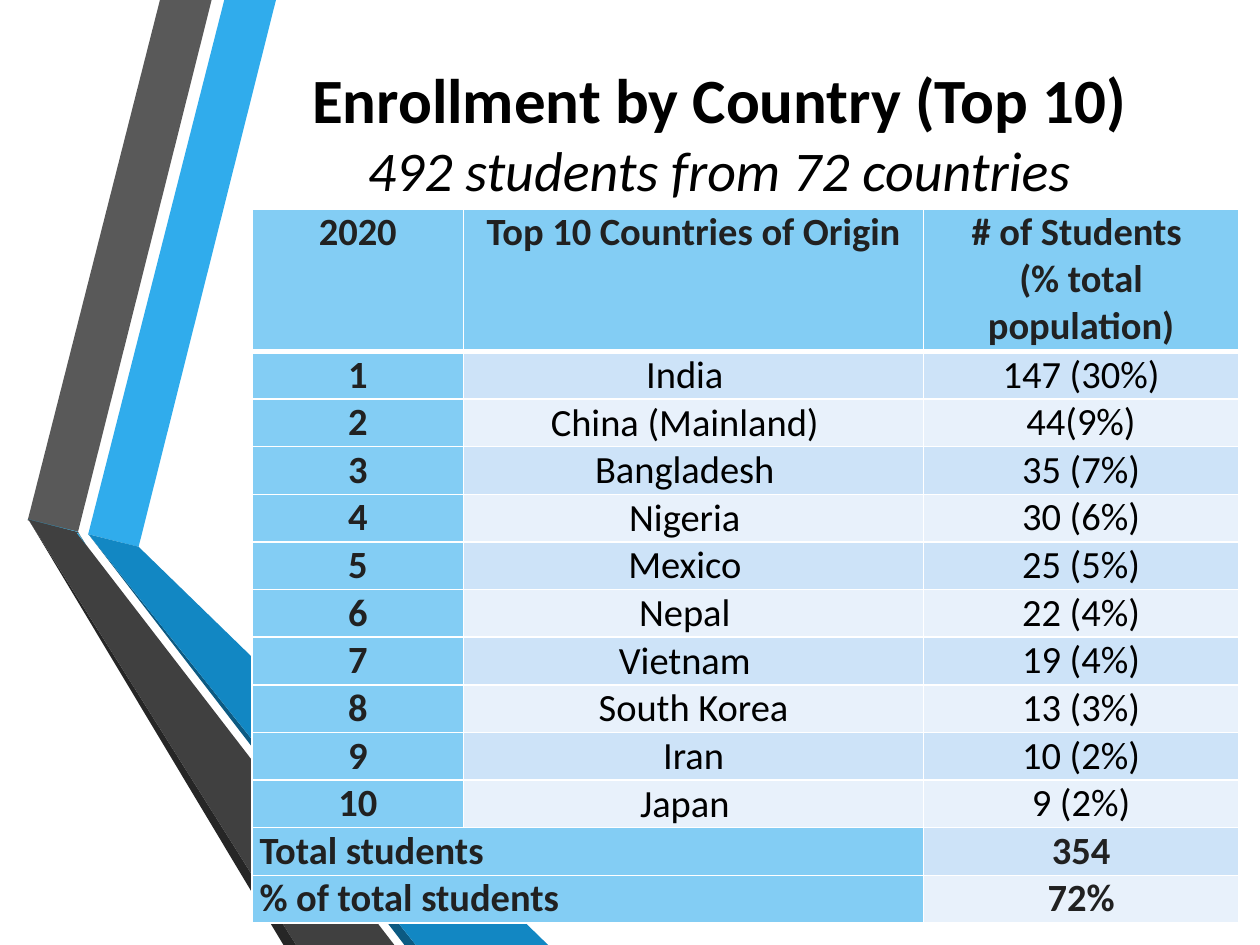
import pptx
import pptx.util
import pptx.dml.color
import pptx.enum.text
import pptx.oxml
import pptx.oxml.ns
from pptx.util import Inches

# Content
TITLE = [("Enrollment by Country (Top 10)", 36, True, False),
         ("492 students from 72 countries", 32, False, True)]
HEAD = [["2020"], ["Top 10 Countries of Origin"],
        ["# of Students ", "(% total population)"]]
ROWS = [("India", "147 (30%)"), ("China (Mainland)", "44(9%)"),
        ("Bangladesh", "35 (7%)"), ("Nigeria", "30 (6%)"),
        ("Mexico", "25 (5%)"), ("Nepal", "22 (4%)"),
        ("Vietnam", "19 (4%)"), ("South Korea", "13 (3%)"),
        ("Iran", "10 (2%)"), ("Japan", "9 (2%)")]
CENTERED = ("South Korea", "Iran")  # the other countries sit a little left
TOTALS = [("Total students", "354"), ("% of total students", "72%")]
COLS = [1.68, 3.65, 2.5]
HIGH, TALL = 5.67, 1.13
KEY, BANDS = "83CDF4", ["CDE3F8", "E8F1FB"]
DARK, BLACK, WHITE = "212121", "000000", "FFFFFF"

# Ribbon facets, back to front: colour and corners in hundredths of an inch
RIBBON = [
    ("30ACEC", [(70, 424), (110, 434), (219, 0), (178, 0)]),
    ("595959", [(168, 0), (127, 0), (22, 413), (62, 422)]),
    ("262626", [(23, 413), (225, 750), (235, 750)]),
    ("0C5A82", [(330, 750), (71, 425), (321, 750)]),
    ("1287C3", [(70, 424), (71, 425), (330, 750), (435, 750), (110, 434)]),
    ("404040", [(313, 750), (68, 432), (61, 423), (62, 423), (68, 432),
                (63, 424), (62, 422), (61, 422), (22, 412), (23, 413),
                (235, 750)]),
    ("29ABE2", [(62, 422), (22, 412), (61, 422)]),
    ("29ABE2", [(61, 423), (68, 432), (62, 423)]),
]
ALIGN = pptx.enum.text.PP_ALIGN
ANCHOR = pptx.enum.text.MSO_ANCHOR


def paint(fill, color):
    fill.solid()
    fill.fore_color.rgb = pptx.dml.color.RGBColor.from_string(color)


def write(para, text, size, color, bold, italic=False, align=ALIGN.CENTER):
    para.alignment = align
    run = para.add_run()
    run.text = text
    font = run.font
    font.name, font.size = "Calibri", pptx.util.Pt(size)
    font.bold, font.italic = bold, italic
    paint(font.fill, color)


def edge(cell, side, width):
    line = pptx.oxml.parse_xml(
        f'<a:{side} {pptx.oxml.ns.nsdecls("a")} w="{pptx.util.Pt(width)}">'
        f'<a:solidFill><a:srgbClr val="{WHITE}"/></a:solidFill></a:{side}>')
    cell._tc.get_or_add_tcPr().append(line)


def put(cell, lines, fill, color=DARK, bold=True, align=ALIGN.CENTER,
        pad=0.06, shift=0, anchor=ANCHOR.TOP, top=1, base=1):
    for side, width in (("lnL", 1), ("lnR", 1), ("lnT", top), ("lnB", base)):
        edge(cell, side, width)
    paint(cell.fill, fill)
    cell.margin_left, cell.margin_right = Inches(pad), Inches(pad + shift)
    cell.margin_top = cell.margin_bottom = 0
    cell.vertical_anchor = anchor
    frame = cell.text_frame
    for i, text in enumerate(lines):
        para = frame.add_paragraph() if i else frame.paragraphs[0]
        write(para, text, 22, color, bold, align=align)


deck = pptx.Presentation()
deck.slide_width, deck.slide_height = Inches(10), Inches(7.5)
slide = deck.slides.add_slide(deck.slide_layouts[5])
paint(slide.background.fill, WHITE)

# Ribbon
for color, points in RIBBON:
    shape = slide.shapes.build_freeform(*points[0], scale=Inches(0.01))
    shape.add_line_segments(points[1:], close=True)
    facet = shape.convert_to_shape()
    facet.shadow.inherit = False
    paint(facet.fill, color)
    facet.line.fill.background()

# Table
count = 1 + len(ROWS) + len(TOTALS)
grid = slide.shapes.add_table(
    count, len(COLS), Inches(2), Inches(1.66), Inches(sum(COLS)),
    Inches(HIGH)).table
for col, width in zip(grid.columns, COLS):
    col.width = Inches(width)
for i, row in enumerate(grid.rows):
    row.height = Inches((HIGH - TALL) / (count - 1) if i else TALL)

for j, lines in enumerate(HEAD):
    put(grid.cell(0, j), lines, KEY, base=3)
for i, (land, share) in enumerate(ROWS, 1):
    band, top = BANDS[(i - 1) % 2], 3 if i == 1 else 1
    put(grid.cell(i, 0), [str(i)], KEY, top=top)
    put(grid.cell(i, 1), [land], band, BLACK, False, pad=0.07,
        shift=0 if land in CENTERED else 0.14, anchor=ANCHOR.MIDDLE, top=top)
    put(grid.cell(i, 2), [share], band, BLACK, False, pad=0.07, top=top)
for i, (label, value) in enumerate(TOTALS, 1 + len(ROWS)):
    grid.cell(i, 0).merge(grid.cell(i, 1))
    put(grid.cell(i, 0), [label], KEY, align=ALIGN.LEFT)
    put(grid.cell(i, 2), [value], BANDS[(i - 1) % 2])

# Title
title = slide.shapes.title
title.left, title.top = Inches(1.42), Inches(0.24)
title.width, title.height = Inches(8.58), Inches(1.42)
frame = title.text_frame
frame.word_wrap = True
frame.vertical_anchor = ANCHOR.BOTTOM
for i, (text, size, bold, italic) in enumerate(TITLE):
    para = frame.add_paragraph() if i else frame.paragraphs[0]
    write(para, text, size, BLACK, bold, italic)

deck.save("out.pptx")
